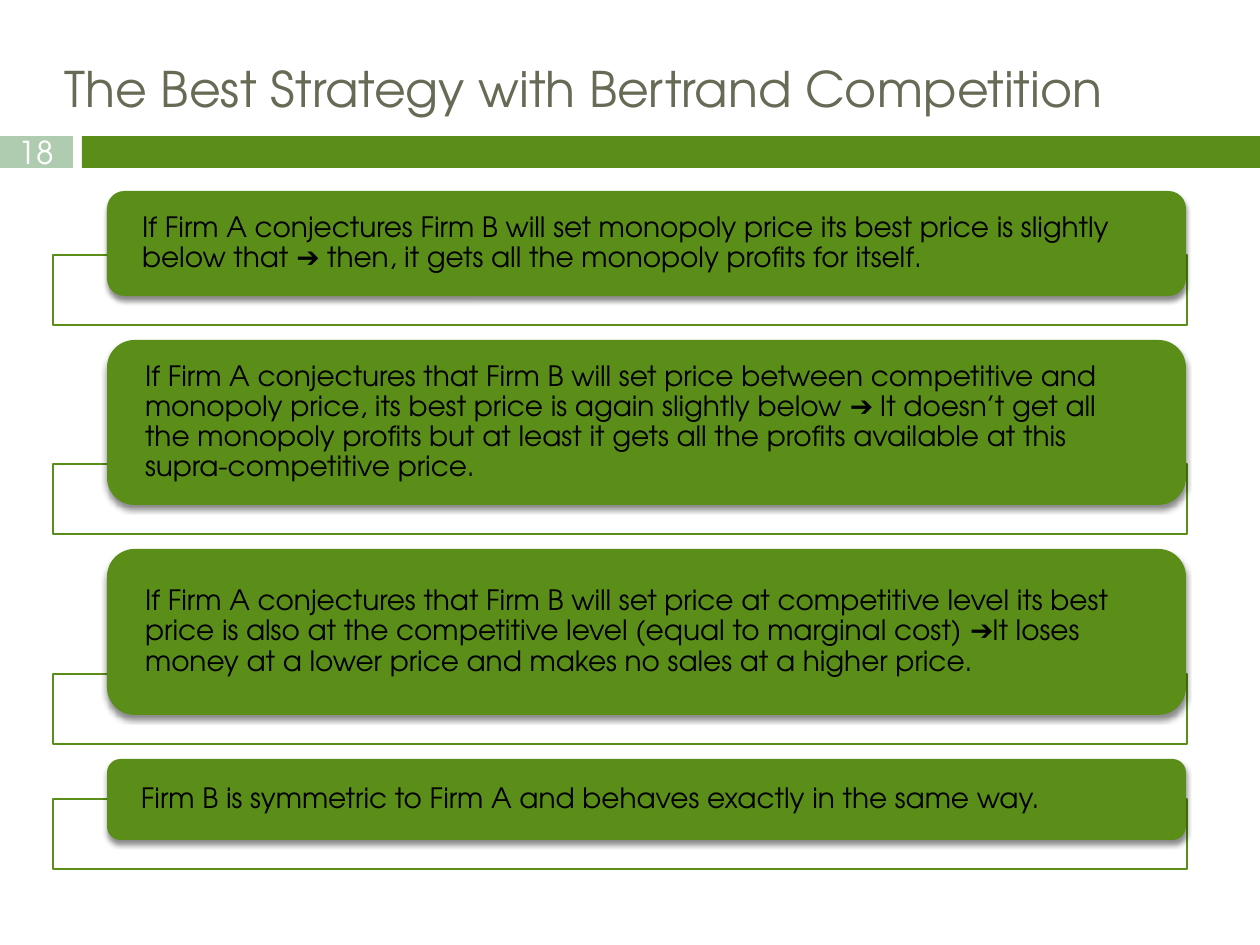
from lxml import etree
from pptx import Presentation
from pptx.dml.color import RGBColor
from pptx.enum.shapes import MSO_SHAPE
from pptx.enum.text import MSO_ANCHOR, PP_ALIGN
from pptx.oxml.ns import qn
from pptx.util import Pt

RECT, ROUND = MSO_SHAPE.RECTANGLE, MSO_SHAPE.ROUNDED_RECTANGLE
TOP, MIDDLE = MSO_ANCHOR.TOP, MSO_ANCHOR.MIDDLE
LEFT, CENTER = PP_ALIGN.LEFT, PP_ALIGN.CENTER
PX = 914400 / 126
FONT = "TeX Gyre Adventor"
COLORS = {"green": "5A8E19", "sage": "B0CCB0", "title": "676A55",
          "white": "FFFFFF", "black": "000000"}


def add_box(kind, x, y, w, h, fill):
    sp = s.shapes.add_shape(kind, *[round(v * PX) for v in (x, y, w, h)])
    sp.shadow.inherit = False
    sp.fill.solid()
    sp.fill.fore_color.rgb = RGBColor.from_string(COLORS[fill])
    sp.line.fill.background()
    return sp


def set_text(sp, text, size, color, align, anchor, inset_x, inset_y):
    tf = sp.text_frame
    tf.word_wrap = True
    tf.vertical_anchor = anchor
    tf.margin_left = tf.margin_right = round(inset_x * PX)
    tf.margin_top = tf.margin_bottom = round(inset_y * PX)
    p = tf.paragraphs[0]
    p.text = text
    p.alignment = align
    p.font.name = FONT
    p.font.size = Pt(size)
    p.font.color.rgb = RGBColor.from_string(COLORS[color])
    return p


prs = Presentation()
prs.slide_width = round(1260 * PX)
prs.slide_height = round(945 * PX)
s = prs.slides.add_slide(prs.slide_layouts[5])

add_box(RECT, 82, 136, 1178, 32, "green")
number = add_box(RECT, 0, 136, 73, 32, "sage")
set_text(number, "18", 18, "white", CENTER, MIDDLE, 0, 0)

title = s.shapes.title
title.left, title.top, title.width, title.height = [
    round(v * PX) for v in (53, 53, 1239, 82)]
set_text(title, "The Best Strategy with Bertrand Competition", 28, "title",
         LEFT, TOP, 12, 6)

steps = [
    (105, "If Firm A conjectures Firm B will set monopoly price its best price "
          "is slightly below that ➔ then, it gets all the monopoly profits for "
          "itself."),
    (165, "If Firm A conjectures that Firm B will set price between competitive "
          "and monopoly price, its best price is again slightly below ➔ It "
          "doesn’t get all the monopoly profits but at least it gets all the "
          "profits available at this supra-competitive price."),
    (166, "If Firm A conjectures that Firm B will set price at competitive level "
          "its best price is also at the competitive level (equal to marginal "
          "cost) ➔It loses money at a lower price and makes no sales at a "
          "higher price."),
    (81, "Firm B is symmetric to Firm A and behaves exactly in the same way."),
]

y = 191
for height, text in steps:
    strip = add_box(RECT, 53, y + height - 41, 1134, 70, "white")
    strip.line.color.rgb = RGBColor.from_string(COLORS["green"])
    strip.line.width = Pt(0.79)
    fill_color = strip.fill._xPr.find(qn("a:solidFill"))[0]
    etree.SubElement(fill_color, qn("a:alpha"), val="90000")

    card = add_box(ROUND, 107, y, 1079, height, "green")
    effects = card._element.spPr.find(qn("a:effectLst"))
    shadow = etree.SubElement(effects, qn("a:outerShdw"), blurRad=str(Pt(3)),
                              dist=str(Pt(2.4)), dir="5400000", rotWithShape="0")
    shade = etree.SubElement(shadow, qn("a:srgbClr"), val=COLORS["black"])
    etree.SubElement(shade, qn("a:alpha"), val="45000")
    p = set_text(card, text, 16, "black", LEFT, MIDDLE, 30, 0)
    p.line_spacing = 0.9
    y += height + 44

prs.save("out.pptx")
